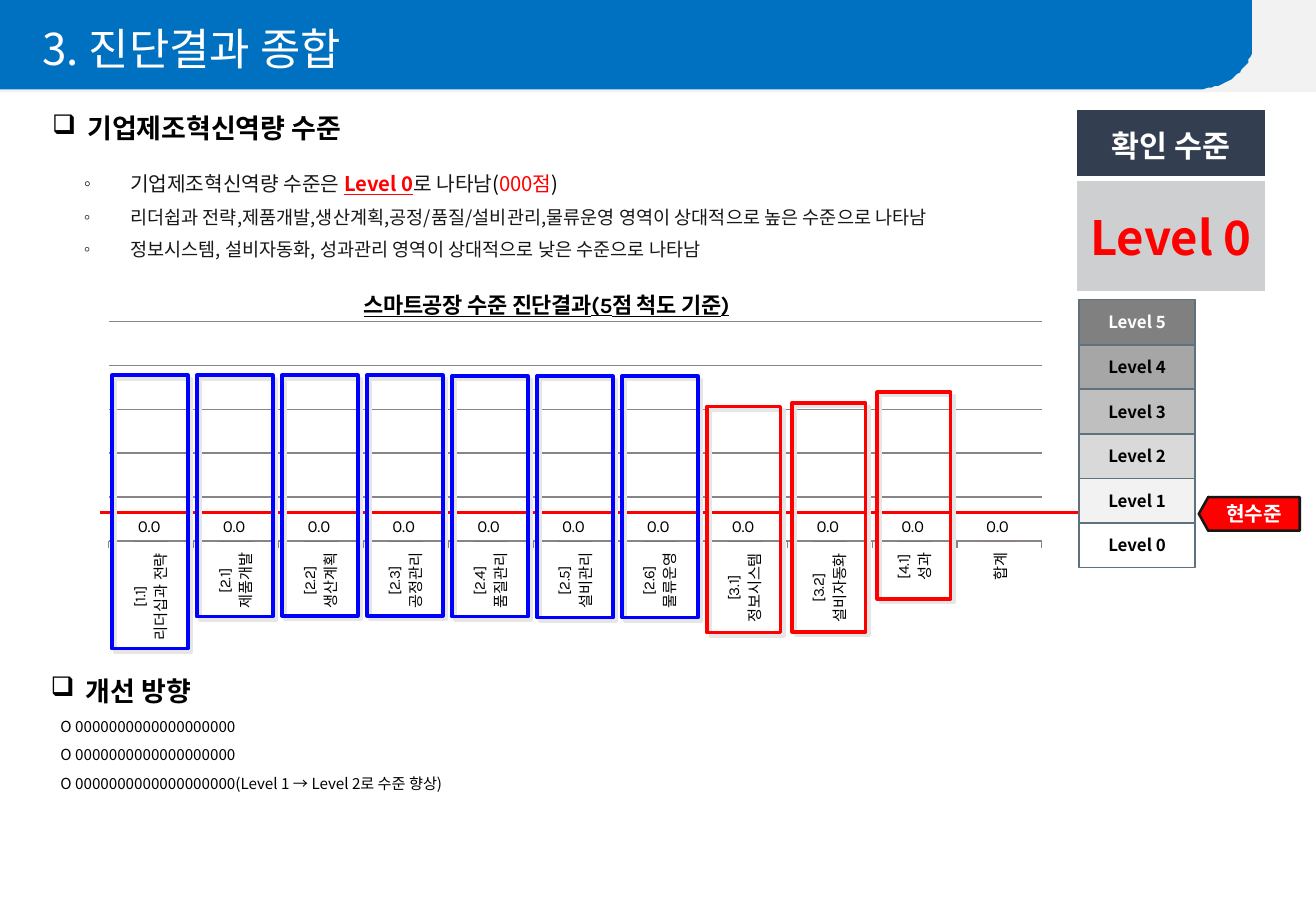
import math
from dataclasses import dataclass
from typing import Any, NamedTuple

import lxml.etree
import pptx
import pptx.chart.data
import pptx.dml.color
import pptx.enum.chart
import pptx.enum.shapes
import pptx.enum.text
import pptx.oxml
import pptx.oxml.ns
import pptx.util

Pt = pptx.util.Pt
qn = pptx.oxml.ns.qn
ALIGN = pptx.enum.text.PP_ALIGN
ANCHOR = pptx.enum.text.MSO_ANCHOR
SHAPE = pptx.enum.shapes.MSO_SHAPE
KOREAN, LATIN = "Noto Sans CJK KR", "Karla"
COLORS = {
    "white": "FFFFFF", "black": "000000", "ink": "181717", "red": "FF0000",
    "blue": "0000FF", "banner": "0070C0", "band": "F2F2F2", "navy": "333F50",
    "silver": "CECFD0", "slate": "5E717D", "shadow": "E7E6E6", "bar": "0E1728",
    "grid": "868686",
}


class Span(NamedTuple):
    text: str
    style: dict[str, Any] = {}


@dataclass
class Area:
    label: str
    top: float
    height: float
    strong: bool = True


@dataclass
class Level:
    number: int
    fill: str
    color: str = "000000"


AREAS = [
    Area("[1.1]\n리더십과 전략", 222.5, 162), Area("[2.1]\n제품개발", 222.5, 143),
    Area("[2.2]\n생산계획", 222.5, 142.5), Area("[2.3]\n공정관리", 222.5, 142.5),
    Area("[2.4]\n품질관리", 223, 142.5), Area("[2.5]\n설비관리", 223, 143),
    Area("[2.6]\n물류운영", 223, 143), Area("[3.1]\n정보시스템", 241, 134, False),
    Area("[3.2]\n설비자동화", 239, 135.5, False), Area("[4.1]\n성과", 232.5, 122.5, False),
]
LEVELS = [Level(0, "FFFFFF"), Level(1, "F2F2F2"), Level(2, "D9D9D9"),
          Level(3, "BFBFBF"), Level(4, "A6A6A6"), Level(5, "808080", "FFFFFF")]


def rgb(color: str) -> pptx.dml.color.RGBColor:
    return pptx.dml.color.RGBColor.from_string(COLORS.get(color, color))


def add_xml(parent: Any, tag: str, **attributes: str) -> Any:
    return lxml.etree.SubElement(parent, qn(tag), attributes)


def add_span(para: Any, text: str, *, size: float = 12, color: str = "black",
             bold: bool = False, underline: bool = False, font: str = KOREAN) -> None:
    span = para.add_run()
    span.text = text
    span.font.size, span.font.name = Pt(size), font
    span.font.bold, span.font.underline = bold, underline
    span.font.color.rgb = rgb(color)
    add_xml(span._r.get_or_add_rPr(), "a:ea", typeface=KOREAN)


def write(box: Any, lines: list[list[Span]], *, align: Any = ALIGN.LEFT, anchor: Any = ANCHOR.TOP,
          wrap: bool = True, bullet: str = "", indent: float = 0, leading: float = 0,
          before: float = 0, insets: tuple = (7.2, 3.6, 7.2, 3.6), **style: Any) -> None:
    frame = box.text_frame
    frame.auto_size = pptx.enum.text.MSO_AUTO_SIZE.NONE
    frame.word_wrap, frame.vertical_anchor = wrap, anchor
    (frame.margin_left, frame.margin_top,
     frame.margin_right, frame.margin_bottom) = map(Pt, insets)
    for index, line in enumerate(lines):
        para = frame.add_paragraph() if index else frame.paragraphs[0]
        para.alignment, para.space_before = align, Pt(before)
        for part in line:
            add_span(para, part.text, **(style | part.style))
        if leading:
            size = (style | line[0].style)["size"]
            para.line_spacing = Pt(size * leading)
        if bullet:
            properties = para._p.get_or_add_pPr()
            properties.set("marL", str(Pt(indent)))
            properties.set("indent", str(-Pt(indent)))
            add_xml(properties, "a:buChar", char=bullet)


def move(box: Any, left: float, top: float, width: float, height: float) -> None:
    box.left, box.top, box.width, box.height = map(Pt, (left, top, width, height))


def add_text(page: Any, place: tuple, lines: list[list[Span]], **style: Any) -> None:
    write(page.shapes.add_textbox(*map(Pt, place)), lines, **style)


def paint(shape: Any, fill: str = "", line: str = "", weight: float = 1) -> None:
    shape.shadow.inherit = False
    if fill:
        shape.fill.solid()
        shape.fill.fore_color.rgb = rgb(fill)
    else:
        shape.fill.background()
    if line:
        shape.line.color.rgb, shape.line.width = rgb(line), Pt(weight)
    else:
        shape.line.fill.background()


def add_box(page: Any, kind: Any, place: tuple, **look: Any) -> Any:
    shape = page.shapes.add_shape(kind, *map(Pt, place))
    paint(shape, **look)
    return shape


def add_banner(page: Any) -> None:
    add_box(page, SHAPE.RECTANGLE, (0, 0, 780, 54.7), fill="band")
    corner = [(706.3 + 36 * math.cos(angle), 26.6 + 26.7 * math.sin(angle))
              for angle in (math.pi / 2 * step / 24 for step in range(25))]
    outline = page.shapes.build_freeform(0, 0, scale=Pt(1))
    outline.add_line_segments([(742.3, 0), *corner, (0, 53.3)])
    paint(outline.convert_to_shape(), fill="banner")


def set_layout(parent: Any, position: int, inner: bool = False, **numbers: float) -> None:
    for old in parent.findall(qn("c:layout")):
        parent.remove(old)
    layout = pptx.oxml.parse_xml(f'<c:layout {pptx.oxml.ns.nsdecls("c")}/>')
    parent.insert(position, layout)
    manual = add_xml(layout, "c:manualLayout")
    if inner:
        add_xml(manual, "c:layoutTarget", val="inner")
    for name in "xy":
        add_xml(manual, f"c:{name}Mode", val="edge")
    for name, number in numbers.items():
        add_xml(manual, f"c:{name}", val=str(number))


def add_result_chart(page: Any) -> None:
    data = pptx.chart.data.CategoryChartData()
    data.categories = [area.label for area in AREAS] + ["합계"]
    data.add_series("Series 1", [0] * (len(AREAS) + 1))
    kind = pptx.enum.chart.XL_CHART_TYPE.COLUMN_CLUSTERED
    chart = page.shapes.add_chart(kind, *map(Pt, (28.8, 152.6, 594.7, 236.9)), data).chart
    chart.has_legend = False
    chart.font.name, chart.font.size, chart.font.color.rgb = LATIN, Pt(10), rgb("black")

    add_span(chart.chart_title.text_frame.paragraphs[0], "스마트공장 수준 진단결과(5점 척도 기준)",
             size=13, bold=True, underline=True, font=LATIN)
    set_layout(chart.chart_title._element, 1, x=0.31, y=0.06)
    area = chart._chartSpace.chart.plotArea
    set_layout(area, 0, inner=True, x=0.06, y=0.16, w=0.93, h=0.55)
    add_xml(add_xml(area, "c:spPr"), "a:noFill")
    clear = pptx.oxml.parse_xml(f'<c:spPr {pptx.oxml.ns.nsdecls("c", "a")}><a:noFill/></c:spPr>')
    chart._chartSpace.find(qn("c:txPr")).addprevious(clear)

    values, categories = chart.value_axis, chart.category_axis
    values.minimum_scale, values.maximum_scale, values.major_unit = 0, 5, 1
    values.has_major_gridlines, values.visible = True, False
    categories.tick_labels.font.size = Pt(9)
    categories._element.find(qn("c:txPr")).find(qn("a:bodyPr")).set("rot", "-5400000")
    for line in (values.major_gridlines.format.line, categories.format.line):
        line.color.rgb, line.width = rgb("grid"), Pt(0.75)

    plot = chart.plots[0]
    plot.gap_width, plot.vary_by_categories, plot.has_data_labels = 150, False, True
    plot.data_labels.show_value = True
    plot.data_labels.number_format = "#,##0.0_ "
    plot.data_labels.number_format_is_linked = False
    series = plot.series[0]
    for part, color in ((series, "bar"), (series.points[len(AREAS)], "red")):
        part.format.fill.solid()
        part.format.fill.fore_color.rgb = rgb(color)


def add_level_table(page: Any) -> None:
    table = page.shapes.add_table(2, 1, *map(Pt, (637.9, 64.8, 112.3, 108))).table
    rows = [("확인 수준", 18, "white", "navy", 41), ("Level 0", 28, "red", "silver", 67)]
    for index, (text, size, color, fill, height) in enumerate(rows):
        table.rows[index].height = Pt(height)
        cell = table.cell(index, 0)
        cell.vertical_anchor = ANCHOR.MIDDLE
        para = cell.text_frame.paragraphs[0]
        para.alignment = ALIGN.CENTER
        add_span(para, text, size=size, color=color, bold=True)
        properties = cell._tc.get_or_add_tcPr()
        for side in "LRTB":
            weight = 3 if side == "TB"[1 - index] else 1
            border = add_xml(properties, f"a:ln{side}", w=str(Pt(weight)))
            add_xml(add_xml(border, "a:solidFill"), "a:srgbClr", val=COLORS["white"])
        cell.fill.solid()
        cell.fill.fore_color.rgb = rgb(fill)


def add_area_frames(page: Any) -> None:
    for index, area in enumerate(AREAS):
        place = (66.3 + 50.4 * index, area.top, 45 if area.strong else 43.5, area.height)
        frame = add_box(page, SHAPE.RECTANGLE, place,
                        line="blue" if area.strong else "red", weight=2.25)
        effects = frame.element.spPr.find(qn("a:effectLst"))
        shadow = add_xml(effects, "a:outerShdw", dist=str(Pt(2.8)), dir="2700000", algn="tl")
        add_xml(shadow, "a:srgbClr", val=COLORS["shadow"])


def main() -> None:
    deck = pptx.Presentation()
    deck.slide_width, deck.slide_height = Pt(780), Pt(540)
    page = deck.slides.add_slide(deck.slide_layouts[1])
    title, body = page.shapes.title, page.placeholders[1]

    # Banner and title
    add_banner(page)
    title.element.getparent().append(title.element)
    move(title, 0, 0, 780, 54)
    write(title, [[Span("3. 진단결과 종합")]], size=26, color="white", leading=1.13,
          insets=(25.2, 14.4, 0, 0))

    # Current level line behind the chart
    marker = page.shapes.add_connector(pptx.enum.shapes.MSO_CONNECTOR.STRAIGHT,
                                       *map(Pt, (59, 303.8, 639.4, 303.8)))
    marker.line.color.rgb, marker.line.width = rgb("red"), Pt(2.25)
    add_xml(marker.element.spPr, "a:effectLst")
    add_result_chart(page)

    # Section headings and lists
    for text, place in (("기업제조혁신역량 수준", (23.8, 61.9, 203.8, 26.6)),
                        ("개선 방향", (23, 395.3, 101.5, 27.4))):
        add_text(page, place, [[Span(text)]], size=16, bold=True, wrap=False,
                 bullet="❑", indent=20.9, leading=1.25)
    move(body, 42.5, 97.2, 698.4, 78.5)
    red, small = {"color": "red"}, {"size": 11}
    write(body, [
        [Span("기업제조혁신역량 수준은 "), Span("Level 0", red | {"bold": True, "underline": True}),
         Span("로 나타남"), Span("(", {"color": "black"}), Span("000점", red),
         Span(")", {"color": "black"})],
        [Span("리더쉽과 전략,제품개발,생산계획,공정/품질/설비관리,물류운영 영역이 상대적으로 높은 수준으로 나타남", small)],
        [Span("정보시스템, 설비자동화, 성과관리 영역이 상대적으로 낮은 수준으로 나타남", small)],
    ], size=12, color="ink", bullet="◦", indent=27.4, leading=1.25, before=5.5)
    goal = "O 0000000000000000000"
    add_text(page, (28.8, 421.2, 739.4, 90),
             [[Span(goal + ending)] for ending in ("", "", "(Level 1 → Level 2로 수준 향상)")],
             size=9, leading=1.25, before=5.5)

    # Confirmed level, level ladder and current level tag
    add_level_table(page)
    centered = {"align": ALIGN.CENTER, "anchor": ANCHOR.MIDDLE, "bold": True, "insets": (0, 0, 0, 0)}
    for level in LEVELS:
        step = add_box(page, SHAPE.RECTANGLE, (639.4, 309.6 - 26.4 * level.number, 69.1, 26.8),
                       fill=level.fill, line="slate")
        write(step, [[Span(f"Level {level.number}")]], size=10, color=level.color, **centered)
    tag = add_box(page, SHAPE.LEFT_ARROW, (710.6, 294.5, 59.8, 20.2),
                  fill="red", line="ink", weight=1.5)
    tag.adjustments[0], tag.adjustments[1] = 0.98, 0.28
    write(tag, [[Span("현수준")]], size=12, color="white", **centered)

    # Frames around strong and weak areas
    add_area_frames(page)
    deck.save("out.pptx")


if __name__ == "__main__":
    main()
